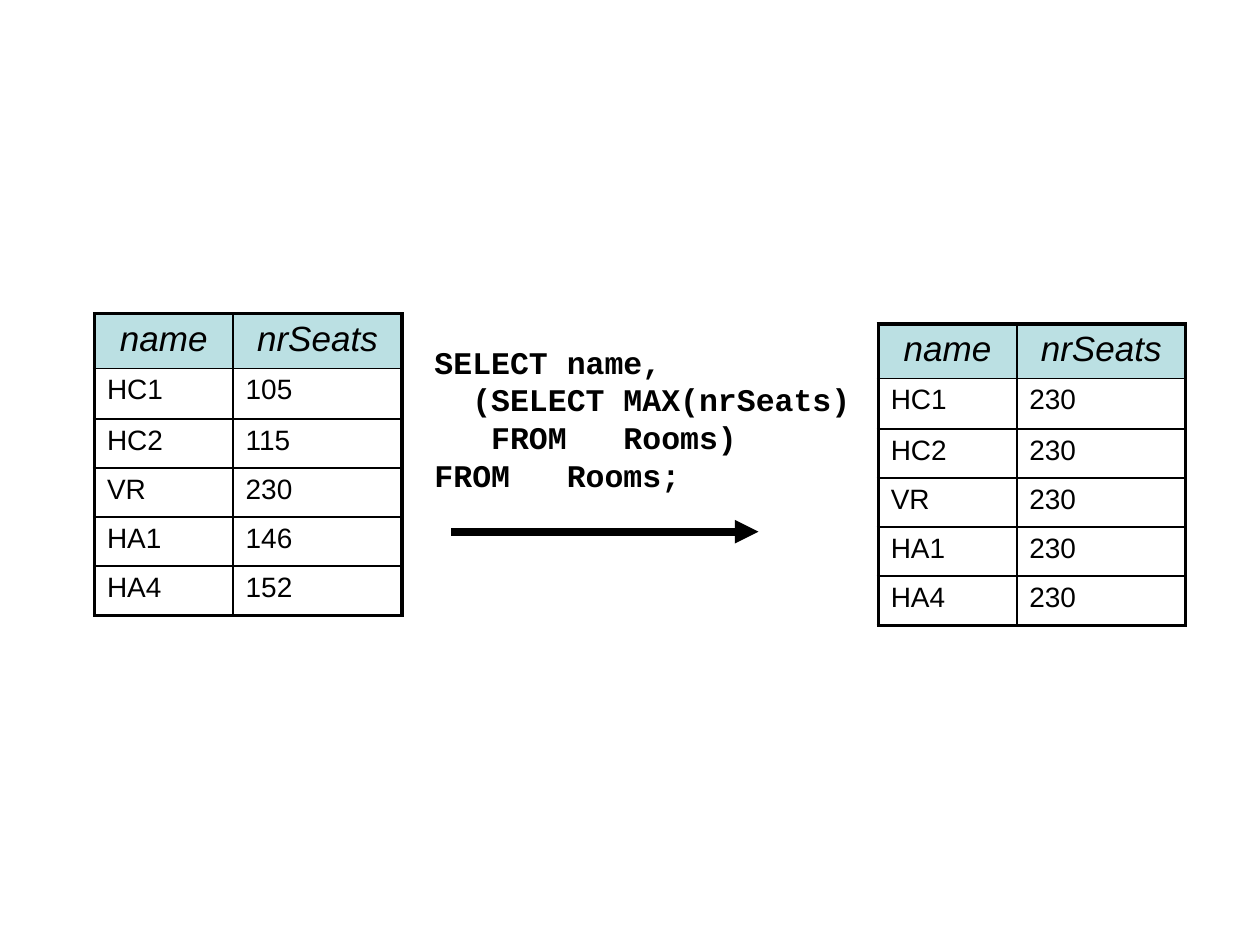
from lxml import etree
from pptx import Presentation
from pptx.dml.color import RGBColor
from pptx.enum.shapes import MSO_CONNECTOR
from pptx.enum.text import MSO_AUTO_SIZE, PP_ALIGN
from pptx.oxml import parse_xml
from pptx.oxml.ns import nsdecls, qn
from pptx.util import Pt

PX = 9144  # 100 px to the inch
BLACK = RGBColor(0x00, 0x00, 0x00)
TEAL = RGBColor(0xBB, 0xE0, 0xE3)
LEFT, CENTER = PP_ALIGN.LEFT, PP_ALIGN.CENTER
STRAIGHT = MSO_CONNECTOR.STRAIGHT
GROW = MSO_AUTO_SIZE.SHAPE_TO_FIT_TEXT
THIN, THICK = Pt(1), Pt(2.25)


def write(frame, text, size=16, font="Arial", bold=False, italic=False, align=LEFT):
    frame.text = text
    for para in frame.paragraphs:
        para.alignment = align
        for run in para.runs:
            run.font.size = Pt(size)
            run.font.name = font
            run.font.bold = bold
            run.font.italic = italic
            run.font.color.rgb = BLACK


def edge(cell, side, width):
    cell._tc.get_or_add_tcPr().append(parse_xml(
        f'<a:ln{side} {nsdecls("a")} w="{width}"><a:solidFill>'
        f'<a:srgbClr val="{BLACK}"/></a:solidFill></a:ln{side}>'))


deck = Presentation()
deck.slide_width, deck.slide_height = 1000 * PX, 750 * PX
slide = deck.slides.add_slide(deck.slide_layouts[6])
shapes = slide.shapes

# Query; \v breaks the line inside a paragraph
query = shapes.add_textbox(335 * PX, 267 * PX, 364 * PX, 130 * PX).text_frame
query.word_wrap = True
query.auto_size = GROW
write(query, "SELECT name, \v  (SELECT MAX(nrSeats)\n   FROM   Rooms)\nFROM   Rooms;",
      size=18, font="Courier New", bold=True)

# Arrow from input to result
arrow = shapes.add_connector(STRAIGHT, 358 * PX, 422 * PX, 602 * PX, 422 * PX)
arrow.line.color.rgb = BLACK
arrow.line.width = Pt(4.5)
etree.SubElement(arrow.line._get_or_add_ln(), qn("a:tailEnd"), type="triangle")
etree.SubElement(arrow._element.spPr, qn("a:effectLst"))

# Input table and result table
names = ["HC1", "HC2", "VR", "HA1", "HA4"]
cols = [110, 134]
rows = [43, 40, 39, 39, 39, 39]
for left, top, seats in [(75, 249, [105, 115, 230, 146, 152]),
                         (697, 257, [230] * 5)]:
    data = [("name", "nrSeats"), *zip(names, seats)]
    grid = shapes.add_table(len(rows), len(cols), left * PX, top * PX,
                            sum(cols) * PX, sum(rows) * PX).table
    for c, width in enumerate(cols):
        grid.columns[c].width = width * PX
    for r, height in enumerate(rows):
        grid.rows[r].height = height * PX
        for c, value in enumerate(data[r]):
            cell = grid.cell(r, c)
            outer = {"L": c == 0, "R": c == len(cols) - 1,
                     "T": r == 0, "B": r == len(rows) - 1}
            for side, thick in outer.items():
                edge(cell, side, THICK if thick else THIN)
            if r == 0:
                cell.fill.solid()
                cell.fill.fore_color.rgb = TEAL
                write(cell.text_frame, value, size=20, italic=True, align=CENTER)
            else:
                cell.fill.background()
                write(cell.text_frame, str(value))

deck.save("out.pptx")
